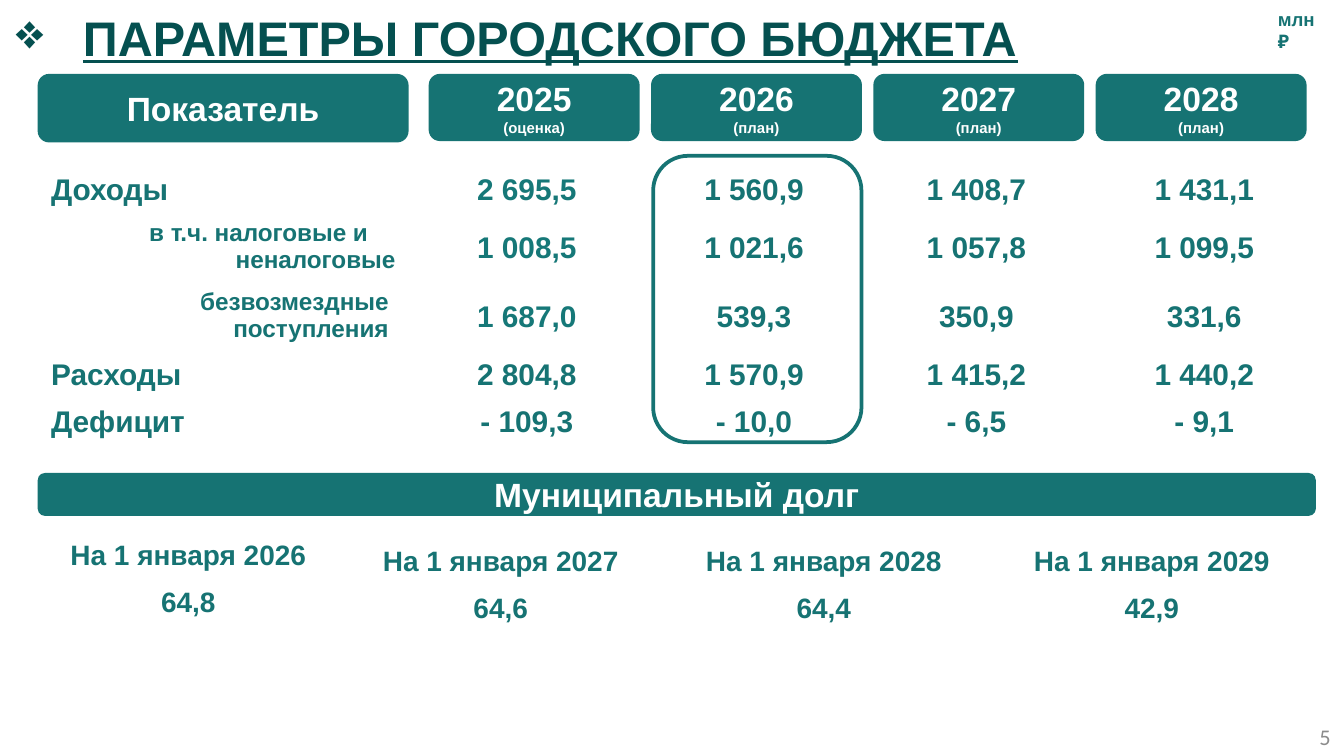
from lxml import etree
from pptx import Presentation
from pptx.dml.color import RGBColor
from pptx.enum import shapes, text
from pptx.oxml import ns
from pptx.util import Pt

TEAL = RGBColor(0x16, 0x73, 0x73)
LIGHT_TEAL = RGBColor(0x16, 0x78, 0x78)
DARK_TEAL = RGBColor(0x05, 0x50, 0x50)
GRAY = RGBColor(0x8C, 0x8C, 0x8C)
WHITE = RGBColor(0xFF, 0xFF, 0xFF)
LEFT, CENTER, RIGHT = text.PP_ALIGN.LEFT, text.PP_ALIGN.CENTER, text.PP_ALIGN.RIGHT
TOP, MIDDLE = text.MSO_ANCHOR.TOP, text.MSO_ANCHOR.MIDDLE

# Content
TITLE = "ПАРАМЕТРЫ ГОРОДСКОГО БЮДЖЕТА"
YEARS = [("2025", "(оценка)"), ("2026", "(план)"), ("2027", "(план)"), ("2028", "(план)")]
BUDGET = [
    (["Доходы"], ["2 695,5", "1 560,9", "1 408,7", "1 431,1"]),
    (["в т.ч. налоговые и", "неналоговые"], ["1 008,5", "1 021,6", "1 057,8", "1 099,5"]),
    (["безвозмездные", "поступления"], ["1 687,0", "539,3", "350,9", "331,6"]),
    (["Расходы"], ["2 804,8", "1 570,9", "1 415,2", "1 440,2"]),
    (["Дефицит"], ["- 109,3", "- 10,0", "- 6,5", "- 9,1"]),
]
DEBT = [("На 1 января 2026", "64,8"), ("На 1 января 2027", "64,6"),
        ("На 1 января 2028", "64,4"), ("На 1 января 2029", "42,9")]

# Grid: the budget rows and the debt rows merge the same columns differently
COLUMNS = [161.3, 37.4, 126.7, 9.4, 107.3, 65.5, 56.2, 122.4]
ROWS = [25.2, 36.5, 36.5, 24, 24, 24, 24, 25, 29]
BUDGET_SPANS = [(0, 1), (2, 2), (3, 4), (5, 6), (7, 7)]
DEBT_SPANS = [(0, 0), (1, 3), (4, 5), (6, 7)]
DEBT_ROW = 7
MARGIN = 20.2
HEADER_TOP = 39.6
YEAR_LEFT, YEAR_STEP, YEAR_WIDTH = 229.7, 119.1, 113

presentation = Presentation()
presentation.slide_width, presentation.slide_height = Pt(720), Pt(405)
slide = presentation.slides.add_slide(presentation.slide_layouts[6])


def write(frame, lines, sizes, color, align=CENTER, bold=True, name="Arial"):
    for index, (line, size) in enumerate(zip(lines, sizes)):
        paragraph = frame.paragraphs[0] if index == 0 else frame.add_paragraph()
        paragraph.text = line
        paragraph.alignment = align
        font = paragraph.font
        font.name, font.size, font.bold = name, Pt(size), bold
        font.color.rgb = color


def add_label(left, top, width, height, line, size, color, align, **style):
    frame = slide.shapes.add_textbox(Pt(left), Pt(top), Pt(width), Pt(height)).text_frame
    write(frame, [line], [size], color, align, **style)
    return frame


def add_rounded(left, top, width, height):
    shape = slide.shapes.add_shape(shapes.MSO_SHAPE.ROUNDED_RECTANGLE,
                                   Pt(left), Pt(top), Pt(width), Pt(height))
    shape.shadow.inherit = False
    return shape


def add_header(left, top, width, height, lines, sizes):
    shape = add_rounded(left, top, width, height)
    shape.fill.solid()
    shape.fill.fore_color.rgb = TEAL
    shape.line.fill.background()
    shape.text_frame.vertical_anchor = MIDDLE
    write(shape.text_frame, lines, sizes, WHITE)


def fill_cell(row, span, lines, size, color=TEAL, align=CENTER, anchor=MIDDLE,
              side=7.2, edge=2.9):
    cell = table.cell(row, span[0])
    cell.vertical_anchor = anchor
    cell.margin_left = cell.margin_right = Pt(side)
    cell.margin_top = cell.margin_bottom = Pt(edge)
    write(cell.text_frame, lines, [size] * len(lines), color, align)
    return cell


# Title with its bullet
title = add_label(1.4, 0.7, 556.6, 38.9, TITLE, 26, DARK_TEAL, LEFT).paragraphs[0]
title_properties = title.runs[0].font
title_properties.underline = True
paragraph_properties = title._p.get_or_add_pPr()
paragraph_properties.set("marL", str(Pt(36)))
paragraph_properties.set("indent", str(-Pt(36)))
bullet = etree.Element(ns.qn("a:buChar"), char="❖")
paragraph_properties.insert(0, bullet)

# Table
table = slide.shapes.add_table(len(ROWS), len(COLUMNS), Pt(MARGIN), Pt(89.3),
                               Pt(sum(COLUMNS)), Pt(sum(ROWS))).table
table.first_row = table.horz_banding = False
for column, width in zip(table.columns, COLUMNS):
    column.width = Pt(width)
for row, height in zip(table.rows, ROWS):
    row.height = Pt(height)
for cell in table.iter_cells():
    cell.fill.background()
    cell.margin_top = cell.margin_bottom = 0
    cell.text_frame.paragraphs[0].font.size = Pt(12)
for row in range(len(ROWS)):
    for first, last in DEBT_SPANS if row >= DEBT_ROW else BUDGET_SPANS:
        if last > first:
            table.cell(row, first).merge(table.cell(row, last))

# Budget rows
for row, (label, values) in enumerate(BUDGET):
    if len(label) == 1:
        fill_cell(row, BUDGET_SPANS[0], label, 16, align=LEFT)
    else:
        fill_cell(row, BUDGET_SPANS[0], label, 13, align=RIGHT, anchor=TOP)
    for index, value in enumerate(values):
        color = LIGHT_TEAL if index == 0 and row < 3 else TEAL
        fill_cell(row, BUDGET_SPANS[index + 1], [value], 16, color)

# The first line of the tax label is indented, the grants label stands off the edge
tax_line = table.cell(1, 0).text_frame.paragraphs[0]
tax_line.alignment = LEFT
tax_line._p.get_or_add_pPr().set("marL", str(Pt(52.5)))
table.cell(2, 0).margin_right = Pt(10.8)

# Debt rows
for index, (span, (date, amount)) in enumerate(zip(DEBT_SPANS, DEBT)):
    layout = dict(anchor=TOP) if index == 0 else dict(side=4.9, edge=0)
    date_cell = fill_cell(DEBT_ROW, span, [date], 15, **layout)
    fill_cell(DEBT_ROW + 1, span, [amount], 15, **layout)
    if index:
        date_cell.text_frame.paragraphs[0].line_spacing = 1.25

# Page number and unit
number = add_label(552.2, 383.8, 167.8, 21.6, "5", 12, GRAY, RIGHT, bold=False, name="Calibri")
number.vertical_anchor = MIDDLE
add_label(677.5, 0.7, 42.5, 19.4, "млн ₽", 10, TEAL, LEFT)

# Header blocks
add_header(MARGIN, HEADER_TOP, 198.7, 36.7, ["Показатель"], [18])
for index, year in enumerate(YEARS):
    add_header(YEAR_LEFT + index * YEAR_STEP, HEADER_TOP, YEAR_WIDTH, 36, year, [18, 8])
add_header(MARGIN, 253.4, 684.7, 23, ["Муниципальный долг"], [18])

# Frame around the 2026 plan
plan_frame = add_rounded(349.9, 83.5, 111.6, 153.4)
plan_frame.fill.background()
plan_frame.line.color.rgb = TEAL
plan_frame.line.width = Pt(2)

presentation.save("out.pptx")
